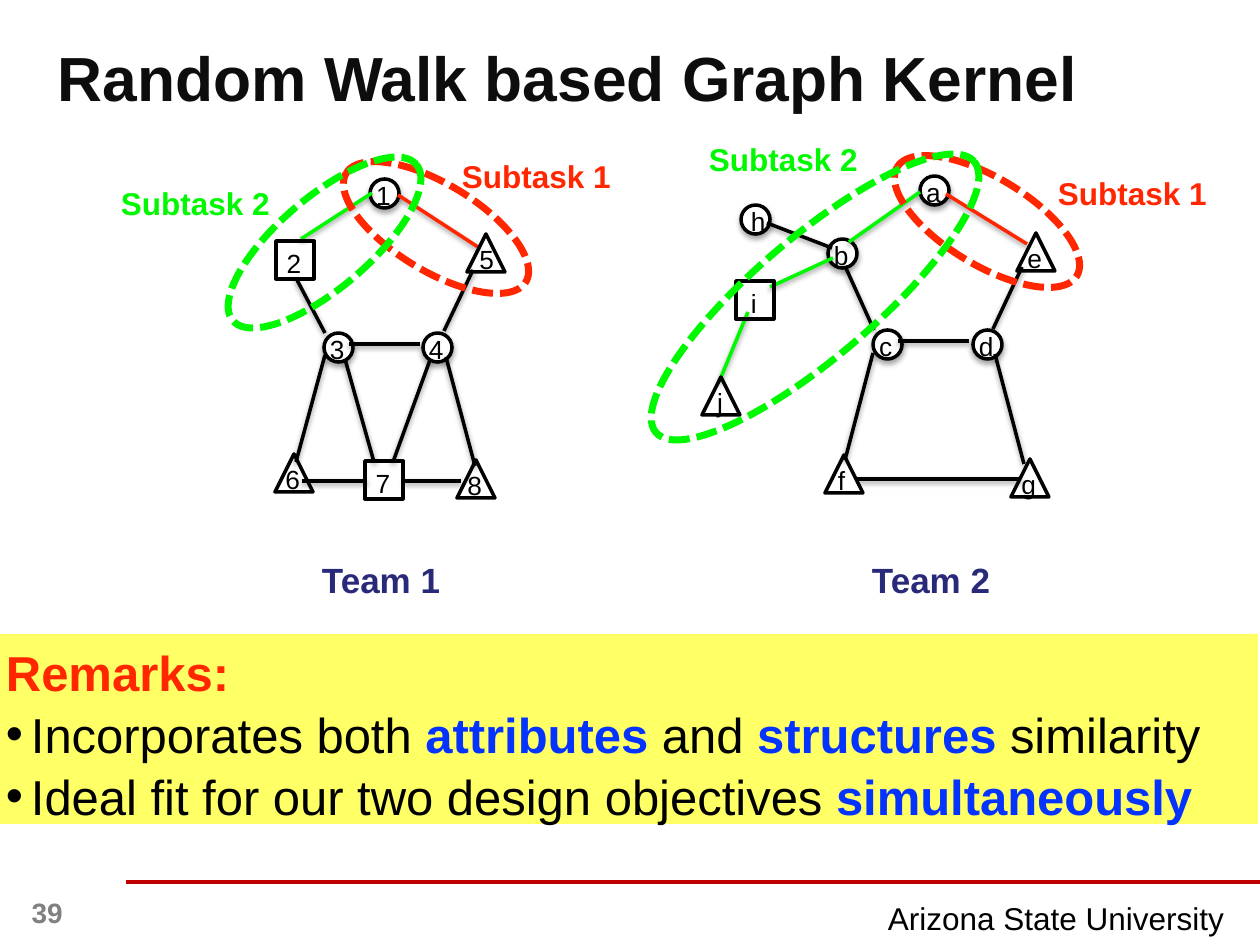
from lxml.etree import SubElement as Sub
from pptx import Presentation
from pptx.dml.color import RGBColor
from pptx.enum.dml import MSO_LINE as Dash
from pptx.enum.shapes import MSO_CONNECTOR as Link, MSO_SHAPE as Shape
from pptx.enum.text import MSO_ANCHOR as Anchor, PP_ALIGN as Align
from pptx.oxml.ns import qn
from pptx.util import Pt

PX = 914400 / 126
BLACK, WHITE, RED, GREEN, BLUE = "000000", "FFFFFF", "FF2600", "00F900", "0433FF"
rgb = RGBColor.from_string


def shade(props, blur, dist, angle, alpha):
    """Add a soft black shadow to shape or run properties."""
    for old in props.findall(qn("a:effectLst")):
        props.remove(old)
    drop = Sub(Sub(props, qn("a:effectLst")), qn("a:outerShdw"),
               blurRad=str(Pt(blur)), dist=str(Pt(dist)),
               dir=str(angle * 60000), rotWithShape="0")
    tone = Sub(drop, qn("a:srgbClr"), val=BLACK)
    Sub(tone, qn("a:alpha"), val=str(alpha * 1000))


def write(box, rows, size, pad=6, wrap=False, align=Align.LEFT, gap=None):
    """Fill a shape with rows of (text, colour, bold) runs."""
    frame = box.text_frame
    form = {"word_wrap": wrap, "vertical_anchor": Anchor.TOP}
    for side in ("left", "right", "top", "bottom"):
        form["margin_" + side] = round(pad * PX)
    for key, val in form.items():
        setattr(frame, key, val)
    for n, row in enumerate(rows):
        para = frame.add_paragraph() if n else frame.paragraphs[0]
        para.alignment = align
        if gap:
            para.line_spacing = gap
        for text, tint, bold in row:
            run = para.add_run()
            run.text = text
            for key, val in {"name": "Arial", "size": Pt(size), "bold": bold}.items():
                setattr(run.font, key, val)
            run.font.color.rgb = rgb(tint)
    return frame


deck = Presentation()
deck.slide_width, deck.slide_height = round(1260 * PX), round(945 * PX)
shapes = deck.slides.add_slide(deck.slide_layouts[6]).shapes

# Footer: rule, university, page number
rule = shapes.add_connector(Link.STRAIGHT, *[round(v * PX) for v in (126, 882, 1260, 882)])
rule.line.color.rgb, rule.line.width = rgb("C00000"), Pt(2)
Sub(rule._element.spPr, qn("a:effectLst"))
box = shapes.add_textbox(*[round(v * PX) for v in (620, 893, 610, 43)])
write(box, [[("Arizona State University", BLACK, False)]], 18, wrap=True, align=Align.RIGHT)
box = shapes.add_textbox(*[round(v * PX) for v in (0, 893, 94, 43)])
write(box, [[("39", "808080", True)]], 16, wrap=True, align=Align.CENTER, gap=0.9)

# Title
box = shapes.add_textbox(*[round(v * PX) for v in (58, 21, 1134, 111)])
frame = write(box, [[("Random Walk based Graph Kernel", "0D0D0D", True)]], 35.6, pad=0, wrap=True)
frame.vertical_anchor = Anchor.MIDDLE
props = frame.paragraphs[0].runs[0].font._element
shade(props, 4, 3, 45, 40)
props.find(qn("a:solidFill")).addnext(props.find(qn("a:effectLst")))

# Round nodes
rounds = [("1", 370, 179), ("3", 324, 333), ("4", 423, 333), ("a", 920, 176),
          ("b", 828, 239), ("c", 873, 330), ("d", 973, 330), ("h", 741, 205)]
for name, x, y in rounds:
    node = shapes.add_shape(Shape.OVAL, *[round(v * PX) for v in (x, y, 29, 29)])
    node.fill.solid()
    node.fill.fore_color.rgb = rgb(WHITE)
    node.line.color.rgb, node.line.width = rgb(BLACK), Pt(2)
    shade(node._element.spPr, 3, 1.8, 90, 35)

# Edges of both teams
edges = {
    BLACK: [
        (349, 344, 420, 344), (302, 481, 367, 481), (325, 333, 296, 278),
        (444, 331, 473, 270), (296, 462, 325, 355), (475, 466, 446, 357),
        (374, 462, 345, 359), (393, 462, 430, 360), (404, 481, 461, 481),
        (898, 341, 969, 341), (857, 479, 1021, 479), (874, 330, 845, 266),
        (993, 329, 1022, 267), (845, 460, 873, 353), (1024, 464, 995, 354),
        (767, 223, 832, 248)],
    GREEN: [(301, 239, 372, 193), (849, 242, 920, 192),
            (770, 287, 833, 258), (719, 382, 748, 312)],
    RED: [(478, 247, 398, 195), (1027, 244, 946, 194)],
}
for tint, ends in edges.items():
    for pts in ends:
        edge = shapes.add_connector(Link.STRAIGHT, *[round(v * PX) for v in pts])
        edge.line.color.rgb, edge.line.width = rgb(tint), Pt(2)
        shade(edge._element.spPr, 3, 1.6, 90, 38)

# Square and triangle nodes
squares = [("2", 276, 241), ("7", 365, 461), ("i", 736, 281)]
peaks = [("5", 467, 234), ("6", 275, 454), ("8", 457, 460), ("e", 1017, 233),
         ("j", 702, 377), ("f", 825, 455), ("g", 1011, 459)]
for name, x, y in squares + peaks:
    if (name, x, y) in squares:
        node = shapes.add_shape(Shape.RECTANGLE, *[round(v * PX) for v in (x, y, 38, 38)])
    else:
        path = shapes.build_freeform(x + 19, y, scale=PX)
        path.add_line_segments([(x + 38, y + 38), (x, y + 38)], close=True)
        node = path.convert_to_shape()
    node.shadow.inherit = False
    node.fill.background()
    node.line.color.rgb, node.line.width = rgb(BLACK), Pt(2)

# Node labels, centred on their nodes
nudge = {"h": 4, "f": -2, "5": 2}
for nodes, size, drop in ((rounds, 29, -6), (squares, 38, 0), (peaks, 38, 3)):
    for name, x, y in nodes:
        wide = 20 if name in "ijf" else 29
        left = x + (size - wide) / 2 + nudge.get(name, 0)
        box = shapes.add_textbox(*[round(v * PX) for v in (left, y + drop, wide, 42)])
        write(box, [[(name, BLACK, False)]], 15)

# Remarks
box = shapes.add_shape(Shape.RECTANGLE, *[round(v * PX) for v in (0, 634, 1258, 190)])
box.shadow.inherit = False
box.fill.solid()
box.fill.fore_color.rgb = rgb("FFFF66")
box.line.fill.background()
rows = [
    [("Remarks:", RED, True)],
    [("Incorporates both ", BLACK, False), ("attributes", BLUE, True),
     (" and ", BLACK, False), ("structures", BLUE, True), (" similarity", BLACK, False)],
    [("Ideal fit for our two design objectives ", BLACK, False), ("simultaneously", BLUE, True)],
]
frame = write(box, rows, 28, wrap=True, gap=1.05)
for para in frame.paragraphs[1:]:
    props = para._p.get_or_add_pPr()
    props.set("marL", str(round(25 * PX)))
    props.set("indent", str(round(-25 * PX)))
    Sub(props, qn("a:buFont"), typeface="Arial")
    Sub(props, qn("a:buChar"), char="•")

# Subtask outlines
rings = [(331, 184, 210, 87, 31.2, RED), (882, 178, 210, 87, 31.2, RED),
         (204, 197, 241, 91, 139.6, GREEN), (606, 237, 418, 120, 139.6, GREEN)]
for *area, turn, tint in rings:
    ring = shapes.add_shape(Shape.OVAL, *[round(v * PX) for v in area])
    ring.shadow.inherit = False
    ring.fill.background()
    ring.rotation = turn
    for key, val in {"width": Pt(4), "dash_style": Dash.SQUARE_DOT}.items():
        setattr(ring.line, key, val)
    ring.line.color.rgb = rgb(tint)

# Subtask and team captions
notes = [("Subtask 1", 456, 151, 163, 48, 18, RED), ("Subtask 1", 1052, 168, 163, 48, 18, RED),
         ("Subtask 2", 115, 178, 163, 48, 18, GREEN), ("Subtask 2", 703, 134, 163, 48, 18, GREEN),
         ("Team 1", 316, 553, 132, 52, 20, "29297A"), ("Team 2", 866, 553, 132, 52, 20, "29297A")]
for text, *area, size, tint in notes:
    box = shapes.add_textbox(*[round(v * PX) for v in area])
    write(box, [[(text, tint, True)]], size)

deck.save("out.pptx")
